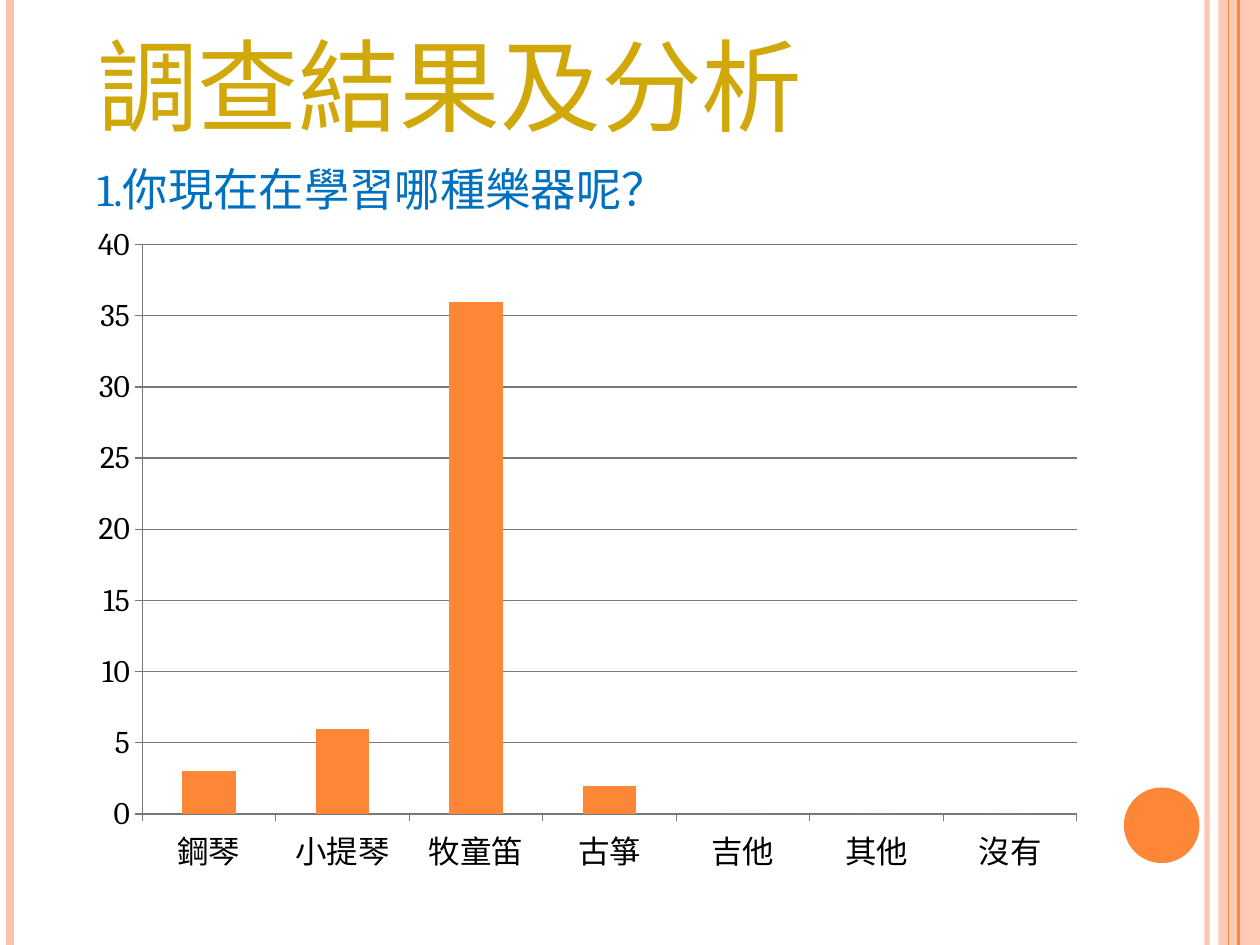
"""Build the survey results slide with a column chart of instruments."""
from lxml.etree import SubElement
from pptx import Presentation
from pptx.chart.data import CategoryChartData
from pptx.dml.color import RGBColor
from pptx.enum.chart import XL_CHART_TYPE, XL_TICK_MARK
from pptx.enum.shapes import MSO_CONNECTOR, MSO_SHAPE
from pptx.enum.text import MSO_ANCHOR, PP_ALIGN
from pptx.oxml import parse_xml
from pptx.oxml.ns import nsdecls, qn
from pptx.util import Inches, Pt

ORANGE = RGBColor(0xFE, 0x86, 0x37)
PEACH = RGBColor(0xFE, 0xC3, 0xAE)
GOLD = RGBColor(0xD0, 0xA8, 0x0A)
BLUE = RGBColor(0x00, 0x70, 0xC0)
BLACK = RGBColor(0x00, 0x00, 0x00)
GREY = RGBColor(0x78, 0x78, 0x78)
FONT = "Cambria"


def write(para, text, size, color, font=FONT, cap="small"):
    run = para.add_run()
    run.text = text
    run.font.size = Pt(size)
    run.font.name = font
    run.font.color.rgb = color
    run._r.get_or_add_rPr().set("cap", cap)


def fade(part, percent):
    for color in part.iter(qn("a:srgbClr")):
        SubElement(color, qn("a:alpha"), val=str(percent * 1000))


prs = Presentation()
prs.slide_width = Inches(10)
prs.slide_height = Inches(7.5)
slide = prs.slides.add_slide(prs.slide_layouts[5])
shapes = slide.shapes

band = shapes.add_shape(MSO_SHAPE.RECTANGLE, Inches(9.67), 0, Inches(0.33), Inches(7.5))
disc = shapes.add_shape(MSO_SHAPE.OVAL, Inches(8.92), Inches(6.25), Inches(0.6), Inches(0.6))
for shape, color in ((band, PEACH), (disc, ORANGE)):
    shape.shadow.inherit = False
    shape.fill.solid()
    shape.fill.fore_color.rgb = color
    shape.line.fill.background()
fade(band._element.spPr, 87)

for x, color, width, solid in (
    (9.58, PEACH, 3, 93),
    (0.08, PEACH, 4.5, 100),
    (9.83, ORANGE, 1.5, 100),
    (9.75, ORANGE, 0.75, 100),
):
    stripe = shapes.add_connector(MSO_CONNECTOR.STRAIGHT, Inches(x), 0, Inches(x), Inches(7.5))
    stripe.line.color.rgb = color
    stripe.line.width = Pt(width)
    if solid < 100:
        fade(stripe._element.spPr, solid)
    SubElement(stripe._element.spPr, qn("a:effectLst"))

title = shapes.title
title.left, title.top = Inches(0.67), Inches(0.13)
title.width, title.height = Inches(8.35), Inches(1.65)
title.text_frame.vertical_anchor = MSO_ANCHOR.BOTTOM
para = title.text_frame.paragraphs[0]
para.alignment = PP_ALIGN.LEFT
write(para, "調查結果及分析", size=72, color=GOLD)
para.add_line_break()
write(para, "1.你現在在學習哪種樂器呢？", size=32.4, color=BLUE)

data = CategoryChartData()
data.categories = ["鋼琴", "小提琴", "牧童笛", "古箏", "吉他", "其他", "沒有"]
data.add_series("Series 1", (3, 6, 36, 2, 0, 0, 0))
frame = shapes.add_chart(
    XL_CHART_TYPE.COLUMN_CLUSTERED,
    Inches(0.5), Inches(1.75), Inches(8.17), Inches(5.33), data,
)
chart = frame.chart
chart.has_legend = False
chart.has_title = False
chart.font.name = FONT
chart.font.size = Pt(18)
chart.font.color.rgb = BLACK

plot = chart.plots[0]
plot.gap_width = 150
plot.vary_by_categories = False
bars = plot.series[0].format.fill
bars.solid()
bars.fore_color.rgb = ORANGE

for axis in (chart.category_axis, chart.value_axis):
    axis.major_tick_mark = XL_TICK_MARK.OUTSIDE
    axis.minor_tick_mark = XL_TICK_MARK.NONE
    axis.format.line.color.rgb = GREY
chart.category_axis.has_major_gridlines = False
scale = chart.value_axis
scale.minimum_scale, scale.maximum_scale, scale.major_unit = 0, 40, 5
scale.has_major_gridlines = True
scale.major_gridlines.format.line.color.rgb = GREY

area = chart._chartSpace.chart.plotArea
for old in area.findall(qn("c:layout")):
    area.remove(old)
layout = parse_xml(f"<c:layout {nsdecls('c')}><c:manualLayout/></c:layout>")
for tag, value in (
    ("layoutTarget", "inner"), ("xMode", "edge"), ("yMode", "edge"),
    ("x", "0.077"), ("y", "0.036"), ("w", "0.908"), ("h", "0.848"),
):
    SubElement(layout[0], qn(f"c:{tag}"), val=value)
area.insert(0, layout)

prs.save("out.pptx")
